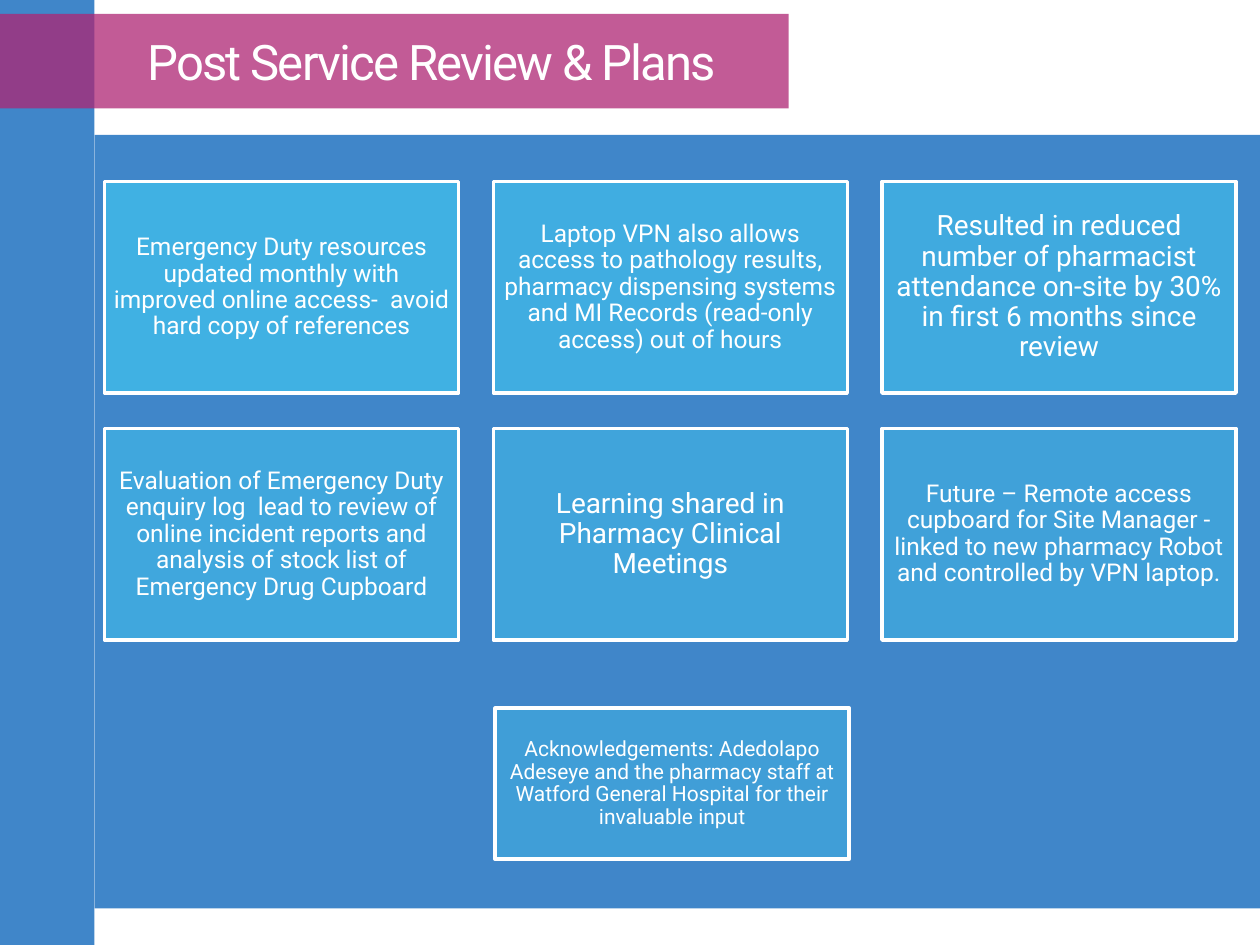
from pptx import Presentation
from pptx.dml.color import RGBColor
from pptx.enum.shapes import MSO_SHAPE
from pptx.enum.text import MSO_ANCHOR, PP_ALIGN
from pptx.oxml.ns import qn
from pptx.util import Inches, Pt
from lxml import etree

RECT = MSO_SHAPE.RECTANGLE
MIDDLE = MSO_ANCHOR.MIDDLE
CENTER = PP_ALIGN.CENTER
COLORS = {"blue": "005EB8", "pink": "AE2573", "sky": "41B6E6", "white": "FFFFFF"}

prs = Presentation()
prs.slide_width, prs.slide_height = Inches(10), Inches(7.5)
slide = prs.slides.add_slide(prs.slide_layouts[6])


def add_rect(box, color, alpha):
    """Add a borderless rectangle with a see-through fill (alpha in percent)."""
    rect = slide.shapes.add_shape(RECT, *map(Inches, box))
    rect.shadow.inherit = False
    rect.fill.solid()
    rect.fill.fore_color.rgb = RGBColor.from_string(COLORS[color])
    tint = rect.fill._xPr.find(qn("a:solidFill"))[0]
    etree.SubElement(tint, qn("a:alpha")).set("val", str(alpha * 1000))
    rect.line.fill.background()
    return rect


def set_text(shape, text, size, inset, spacing=1.0):
    """Write one centred white paragraph and return its run."""
    frame = shape.text_frame
    gap = Inches(inset)
    values = {"word_wrap": True, "vertical_anchor": MIDDLE, "margin_left": gap,
              "margin_right": gap, "margin_top": gap, "margin_bottom": gap}
    for name, value in values.items():
        setattr(frame, name, value)
    para = frame.paragraphs[0]
    para.alignment, para.line_spacing = CENTER, spacing
    run = para.add_run()
    run.text = text
    run.font.name, run.font.size = "Roboto", Pt(size)
    run.font.color.rgb = RGBColor.from_string(COLORS["white"])
    return run


# Side bar, content panel and title band
for box, color in [((0, 0, 0.75, 7.5), "blue"),
                   ((0.75, 1.07, 9.25, 6.14), "blue"),
                   ((0, 0.11, 6.26, 0.75), "pink")]:
    add_rect(box, color, 75)

# Title
title = slide.shapes.add_textbox(*map(Inches, (0.75, 0.13, 5.35, 0.71)))
run = set_text(title, "Post Service Review & Plans", 28, 0.05)
run._r.get_or_add_rPr().set("spc", "-100")

# Cards: a grid of three columns, then the acknowledgements below
WIDTH, HEIGHT = 2.81, 1.68
LEFT, TOP = 0.83, 1.44
STEP_X, STEP_Y = 3.085, 1.96
cards = [
    ("Emergency Duty resources updated monthly with improved online access-  "
     "avoid hard copy of references", 14),
    ("Laptop VPN also allows access to pathology results, pharmacy dispensing "
     "systems and MI Records (read-only access) out of hours", 14),
    ("Resulted in reduced number of pharmacist attendance on-site by 30% in "
     "first 6 months since review", 16),
    ("Evaluation of Emergency Duty enquiry log  lead to review of online "
     "incident reports and analysis of stock list of Emergency Drug Cupboard", 14),
    ("Learning shared in Pharmacy Clinical Meetings", 16),
    ("Future – Remote access cupboard for Site Manager - linked to new pharmacy "
     "Robot and controlled by VPN laptop.", 14),
    ("Acknowledgements: Adedolapo Adeseye and the pharmacy staff at Watford "
     "General Hospital for their invaluable input", 12),
]
last = len(cards) - 1
for i, (text, size) in enumerate(cards):
    row, col = divmod(i, 3)
    box = (LEFT + col * STEP_X, TOP + row * STEP_Y, WIDTH, HEIGHT)
    if i == last:
        box = (3.93, 5.62, WIDTH, 1.2)
    # Opacity fades evenly from 90 to 50 percent
    card = add_rect(box, "sky", round(90 - 40 * i / last))
    card.line.color.rgb = RGBColor.from_string(COLORS["white"])
    card.line.width = Pt(2)
    set_text(card, text, size, round(size / 240, 2), 0.9)

prs.save("out.pptx")
